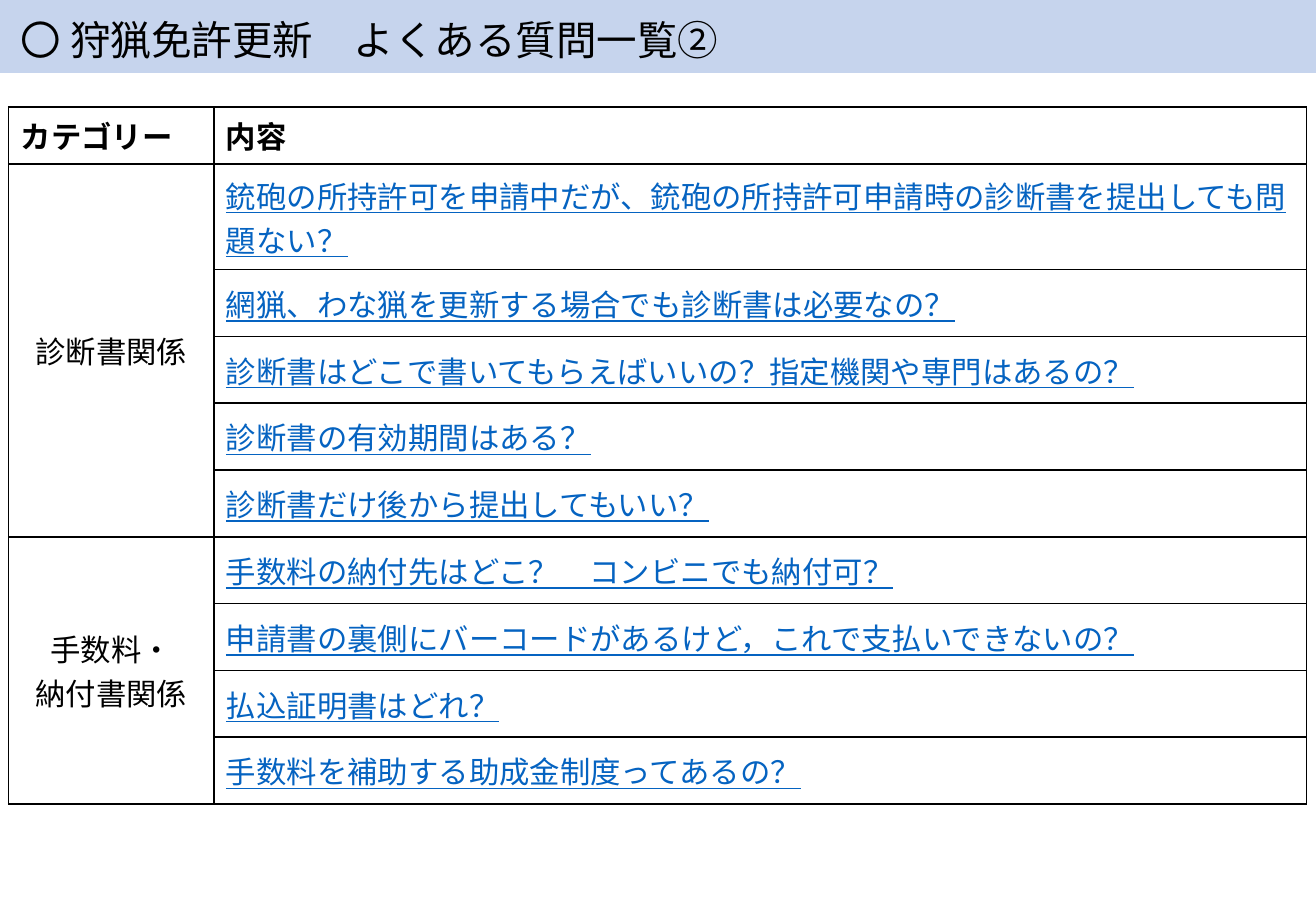
from dataclasses import dataclass

from lxml.etree import SubElement
from pptx import Presentation
from pptx.dml.color import RGBColor
from pptx.enum.shapes import MSO_SHAPE as Shape
from pptx.enum.text import MSO_ANCHOR as Anchor, MSO_AUTO_SIZE as AutoSize, PP_ALIGN as Align
from pptx.oxml import parse_xml
from pptx.oxml.ns import nsdecls, qn
from pptx.slide import Slide
from pptx.table import Table, _Cell as Cell
from pptx.text.text import TextFrame
from pptx.util import Inches, Pt

FONT = "Noto Sans CJK JP"
COLORS = {"band": "8FAADC", "text": "000000", "question": "0563C1", "border": "000000"}


@dataclass(frozen=True)
class Category:
    name: str
    questions: tuple[str, ...]


@dataclass(frozen=True)
class Style:
    size: int = 18
    color: str = "text"
    bold: bool = False
    underline: bool = False
    align: Align = Align.LEFT


TITLE = Style(size=24)
HEADER = Style(bold=True)
CATEGORY = Style(align=Align.CENTER)
QUESTION = Style(color="question", underline=True)

HEADINGS = ("カテゴリー", "内容")
CATEGORIES = (
    Category("診断書関係", (
        "銃砲の所持許可を申請中だが、銃砲の所持許可申請時の診断書を提出しても問題ない？",
        "網猟、わな猟を更新する場合でも診断書は必要なの？",
        "診断書はどこで書いてもらえばいいの？指定機関や専門はあるの？",
        "診断書の有効期間はある？",
        "診断書だけ後から提出してもいい？",
    )),
    Category("手数料・\n納付書関係", (
        "手数料の納付先はどこ？　コンビニでも納付可？",
        "申請書の裏側にバーコードがあるけど，これで支払いできないの？",
        "払込証明書はどれ？",
        "手数料を補助する助成金制度ってあるの？",
    )),
)
COLUMN_WIDTHS = (1.69, 8.99)
HEADER_HEIGHT, LONG_HEIGHT, ROW_HEIGHT = 0.47, 0.87, 0.55


def write(frame: TextFrame, text: str, style: Style) -> None:
    frame.text = text
    for para in frame.paragraphs:
        para.alignment = style.align
        font = para.font
        font.name = FONT
        font.size = Pt(style.size)
        font.bold = style.bold
        font.underline = style.underline
        font.color.rgb = RGBColor.from_string(COLORS[style.color])
        SubElement(para._p.pPr.find(qn("a:defRPr")), qn("a:ea"), typeface=FONT)


def outline(cell: Cell) -> None:
    cell.fill.background()
    properties = cell._tc.get_or_add_tcPr()
    for index, side in enumerate("LRTB"):
        properties.insert(index, parse_xml(
            f'<a:ln{side} {nsdecls("a")} w="{Pt(1)}"><a:solidFill>'
            f'<a:srgbClr val="{COLORS["border"]}"/></a:solidFill></a:ln{side}>'))


def fill_cell(table: Table, row: int, column: int, text: str, style: Style) -> None:
    cell = table.cell(row, column)
    cell.vertical_anchor = Anchor.MIDDLE
    write(cell.text_frame, text, style)


def add_heading(page: Slide, width: int) -> None:
    band = page.shapes.add_shape(Shape.RECTANGLE, 0, 0, width, Inches(0.6))
    band.shadow.inherit = False
    band.line.fill.background()
    band.fill.solid()
    band.fill.fore_color.rgb = RGBColor.from_string(COLORS["band"])
    SubElement(next(band.element.iter(qn("a:srgbClr"))), qn("a:alpha"), val="50000")

    title = page.shapes.title
    band.element.addnext(title.element)
    title.left, title.top = Inches(0.07), Inches(0.07)
    title.width, title.height = Inches(6.04), Inches(0.5)
    frame = title.text_frame
    frame.word_wrap = False
    frame.auto_size = AutoSize.NONE
    frame.vertical_anchor = Anchor.MIDDLE
    write(frame, "〇 狩猟免許更新　よくある質問一覧②", TITLE)


def add_questions(page: Slide) -> None:
    count = sum(len(category.questions) for category in CATEGORIES)
    heights = [HEADER_HEIGHT, LONG_HEIGHT] + [ROW_HEIGHT] * (count - 1)
    table = page.shapes.add_table(
        len(heights), len(COLUMN_WIDTHS), Inches(0.07), Inches(0.88),
        Inches(sum(COLUMN_WIDTHS)), Inches(sum(heights))).table
    table.first_row = table.horz_banding = False
    for column, width in zip(table.columns, COLUMN_WIDTHS):
        column.width = Inches(width)
    for row, height in zip(table.rows, heights):
        row.height = Inches(height)
    for cell in table.iter_cells():
        outline(cell)

    for column, heading in enumerate(HEADINGS):
        fill_cell(table, 0, column, heading, HEADER)
    first = 1
    for category in CATEGORIES:
        last = first + len(category.questions) - 1
        table.cell(first, 0).merge(table.cell(last, 0))
        fill_cell(table, first, 0, category.name, CATEGORY)
        for row, question in enumerate(category.questions, first):
            fill_cell(table, row, 1, question, QUESTION)
        first = last + 1


def main() -> None:
    deck = Presentation()
    deck.slide_width, deck.slide_height = Inches(10.83), Inches(7.5)
    page = deck.slides.add_slide(deck.slide_layouts.get_by_name("Title Only"))
    add_heading(page, deck.slide_width)
    add_questions(page)
    deck.save("out.pptx")


if __name__ == "__main__":
    main()
